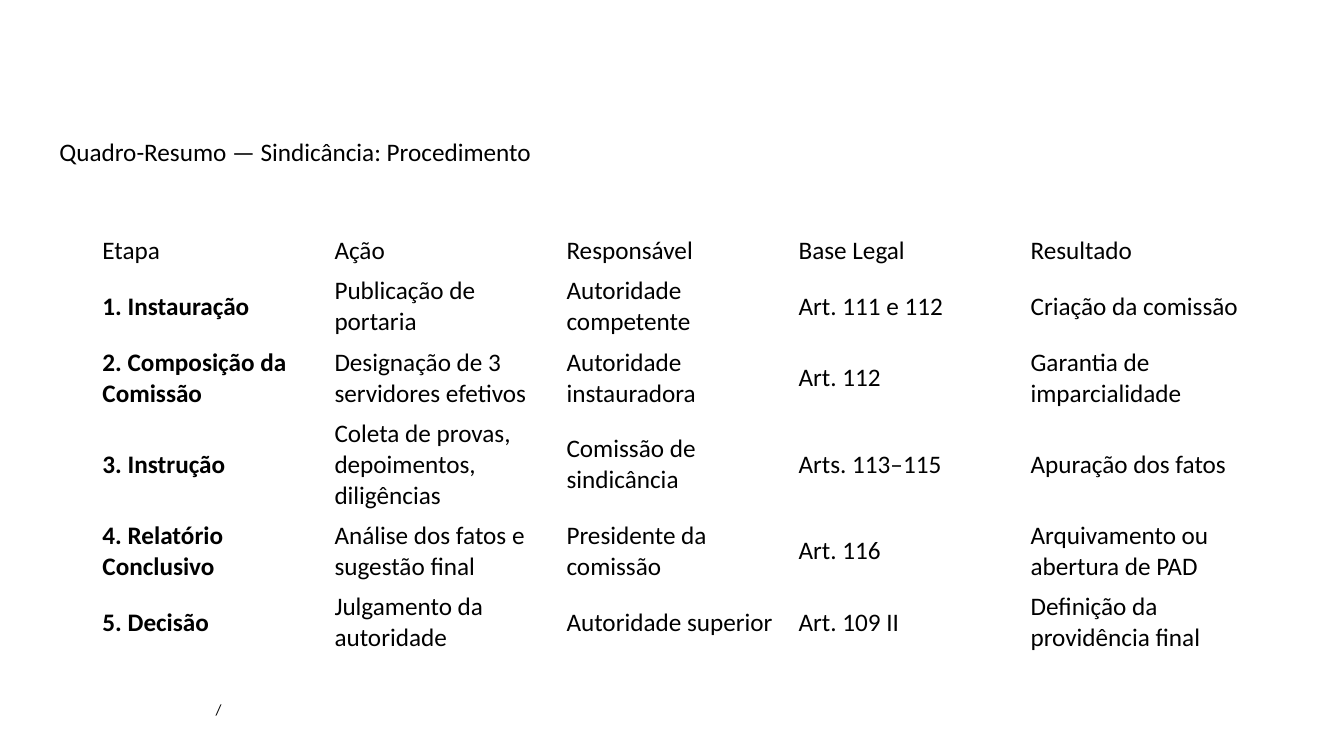
from pptx import Presentation
from pptx.dml.color import RGBColor
from pptx.enum.text import MSO_ANCHOR, PP_ALIGN
from pptx.util import Emu, Pt

PX = 9525  # EMU per px, 96 px to the inch
COLORS = {"text": "000000"}
FONT = "Calibri"
LINE_HEIGHT, ROW_PADDING = 29, 10

HEADER = ["Etapa", "Ação", "Responsável", "Base Legal", "Resultado"]
# Each step: number of text lines in the row, then its cells
STEPS = [
    (2, ["1. Instauração", "Publicação de portaria", "Autoridade competente",
         "Art. 111 e 112", "Criação da comissão"]),
    (2, ["2. Composição da Comissão", "Designação de 3 servidores efetivos",
         "Autoridade instauradora", "Art. 112", "Garantia de imparcialidade"]),
    (3, ["3. Instrução", "Coleta de provas, depoimentos, diligências",
         "Comissão de sindicância", "Arts. 113–115", "Apuração dos fatos"]),
    (2, ["4. Relatório Conclusivo", "Análise dos fatos e sugestão final",
         "Presidente da comissão", "Art. 116", "Arquivamento ou abertura de PAD"]),
    (2, ["5. Decisão", "Julgamento da autoridade", "Autoridade superior",
         "Art. 109 II", "Definição da providência final"]),
]


def px(length):
    return Emu(length * PX)


def write(frame, text, size, bold=False):
    frame.text = text
    frame.word_wrap = True
    para = frame.paragraphs[0]
    para.alignment = PP_ALIGN.LEFT
    font = para.runs[0].font
    font.name, font.size, font.bold = FONT, Pt(size), bold
    font.color.rgb = RGBColor.from_string(COLORS["text"])


def place_title(page, left, top, width, height):
    title = page.shapes.title
    title.left, title.top = px(left), px(top)
    title.width, title.height = px(width), px(height)
    write(title.text_frame, "Quadro-Resumo — Sindicância: Procedimento", 18)
    title.text_frame.vertical_anchor = MSO_ANCHOR.TOP


def add_steps_table(page, left, top, width):
    rows = [(1, HEADER)] + STEPS
    heights = [ROW_PADDING + lines * LINE_HEIGHT for lines, _ in rows]
    table = page.shapes.add_table(len(rows), len(HEADER), px(left), px(top),
                                  px(width), px(sum(heights))).table
    table.first_row = table.horz_banding = False
    for row_index, (_, texts) in enumerate(rows):
        table.rows[row_index].height = px(heights[row_index])
        for column_index, text in enumerate(texts):
            cell = table.cell(row_index, column_index)
            cell.fill.background()
            cell.vertical_anchor = MSO_ANCHOR.MIDDLE
            write(cell.text_frame, text, 18, row_index > 0 and column_index == 0)


def add_footer(page, left, top, width, height):
    box = page.shapes.add_textbox(px(left), px(top), px(width), px(height))
    write(box.text_frame, "/", 11)


def main():
    deck = Presentation()
    deck.slide_width, deck.slide_height = px(1280), px(720)
    page = deck.slides.add_slide(deck.slide_layouts[5])
    add_footer(page, 196, 662, 888, 28)
    place_title(page, 47, 125, 1221, 97)
    add_steps_table(page, 88, 219, 1105)
    deck.save("out.pptx")


if __name__ == "__main__":
    main()
